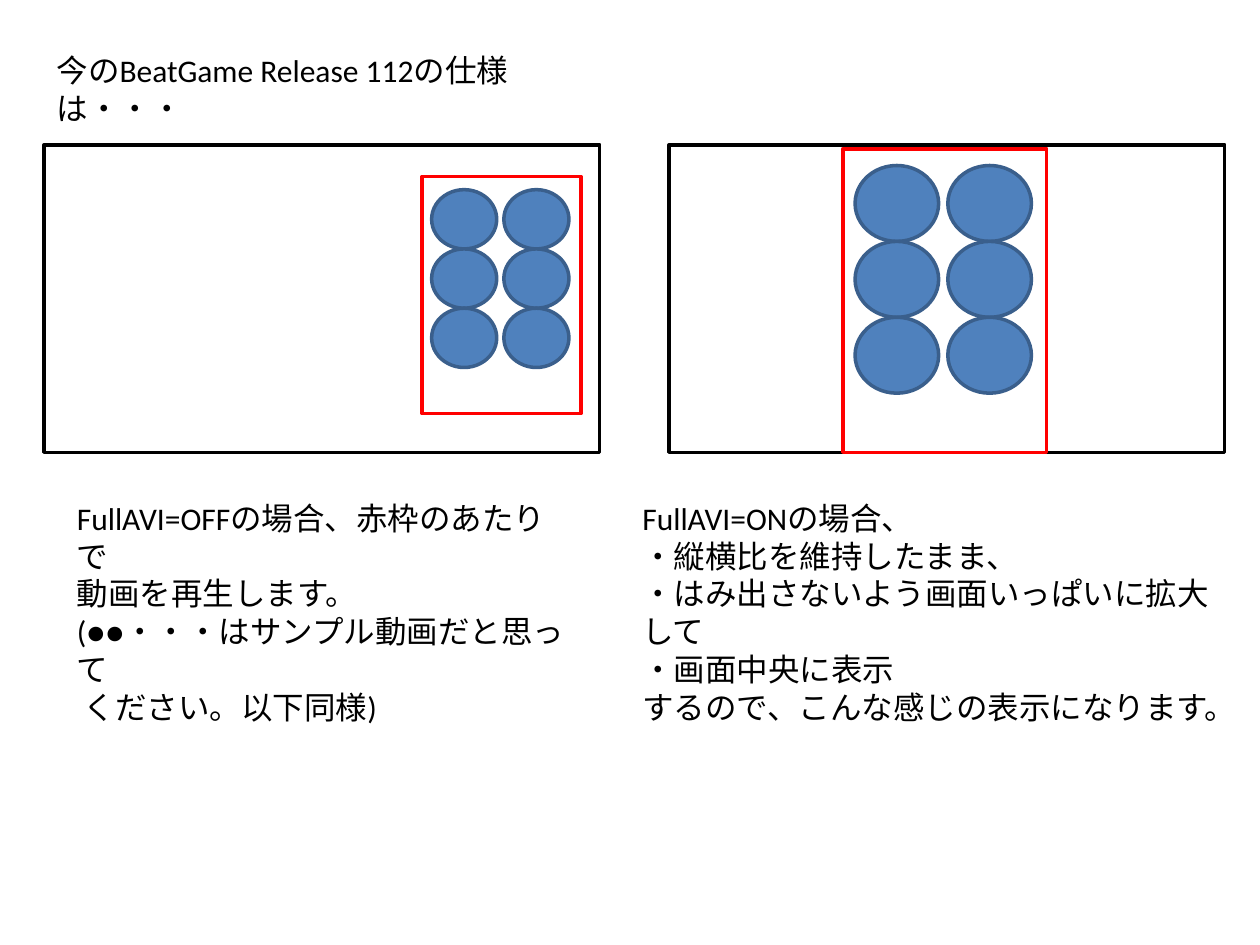
from itertools import product

from pptx import Presentation
from pptx import util as u
from pptx.dml.color import RGBColor
from pptx.enum import shapes, text

BLACK = RGBColor(0x00, 0x00, 0x00)
RED = RGBColor(0xFF, 0x00, 0x00)
BLUE = RGBColor(0x4F, 0x81, 0xBD)
DARK_BLUE = RGBColor(0x3A, 0x5F, 0x8C)

# Content: boxes are left, top, width, height in cm
TITLE = ["今のBeatGame Release 112の仕様は・・・"]
TITLE_BOX = (0.89, 0.91, 11.28, 1.02)
CASES = [
    {
        "screen": (0.89, 2.92, 11.2, 6.2),
        "video": (8.51, 3.56, 3.2, 4.78),
        "caption": (1.3, 9.93, 10.39, 3.33),
        "lines": [
            "FullAVI=OFFの場合、赤枠のあたりで",
            "動画を再生します。",
            "(●●・・・はサンプル動画だと思って\v ください。以下同様)",
        ],
    },
    {
        "screen": (13.49, 2.92, 11.2, 6.2),
        "video": (16.99, 3.0, 4.11, 6.12),
        "caption": (12.7, 9.93, 12.19, 4.11),
        "lines": [
            "FullAVI=ONの場合、",
            "・縦横比を維持したまま、",
            "・はみ出さないよう画面いっぱいに拡大して",
            "・画面中央に表示",
            "するので、こんな感じの表示になります。",
        ],
    },
]

# Sample video: 3 rows of 2 circles, as fractions of the frame
ROWS, COLUMNS = 3, 2
MARGIN_X, MARGIN_Y = 0.06, 0.055
PITCH_X, PITCH_Y = 0.455, 0.25
CIRCLE_WIDTH, CIRCLE_HEIGHT = 0.41, 0.25


def to_cm(box):
    return [u.Cm(length) for length in box]


def add_text(slide, box, lines, size=18, font="Calibri", color=BLACK, wrap=True):
    frame = slide.shapes.add_textbox(*to_cm(box)).text_frame
    frame.word_wrap = wrap
    frame.auto_size = text.MSO_AUTO_SIZE.SHAPE_TO_FIT_TEXT
    for index, line in enumerate(lines):
        paragraph = frame.add_paragraph() if index else frame.paragraphs[0]
        paragraph.text = line
        for run in paragraph.runs:
            run.font.size = u.Pt(size)
            run.font.name = font
            run.font.color.rgb = color


def add_outline(parent, kind, box, line, fill=None):
    shape = parent.shapes.add_shape(kind, *to_cm(box))
    shape.shadow.inherit = False
    shape.line.color.rgb = line
    shape.line.width = u.Pt(2)
    if fill is None:
        shape.fill.background()
    else:
        shape.fill.solid()
        shape.fill.fore_color.rgb = fill


def add_video(slide, box):
    left, top, width, height = box
    group = slide.shapes.add_group_shape()
    add_outline(group, shapes.MSO_SHAPE.RECTANGLE, box, RED)
    for row, column in product(range(ROWS), range(COLUMNS)):
        circle = (
            left + width * (MARGIN_X + column * PITCH_X),
            top + height * (MARGIN_Y + row * PITCH_Y),
            width * CIRCLE_WIDTH,
            height * CIRCLE_HEIGHT,
        )
        add_outline(group, shapes.MSO_SHAPE.OVAL, circle, DARK_BLUE, fill=BLUE)


def main():
    presentation = Presentation()
    presentation.slide_width = u.Cm(25.4)
    presentation.slide_height = u.Cm(19.05)
    slide = presentation.slides.add_slide(presentation.slide_layouts[6])

    # Title
    add_text(slide, TITLE_BOX, TITLE, wrap=False)

    # Screen, video frame and caption of each case
    for case in CASES:
        add_outline(slide, shapes.MSO_SHAPE.RECTANGLE, case["screen"], BLACK)
        add_video(slide, case["video"])
        add_text(slide, case["caption"], case["lines"])

    presentation.save("out.pptx")


if __name__ == "__main__":
    main()
